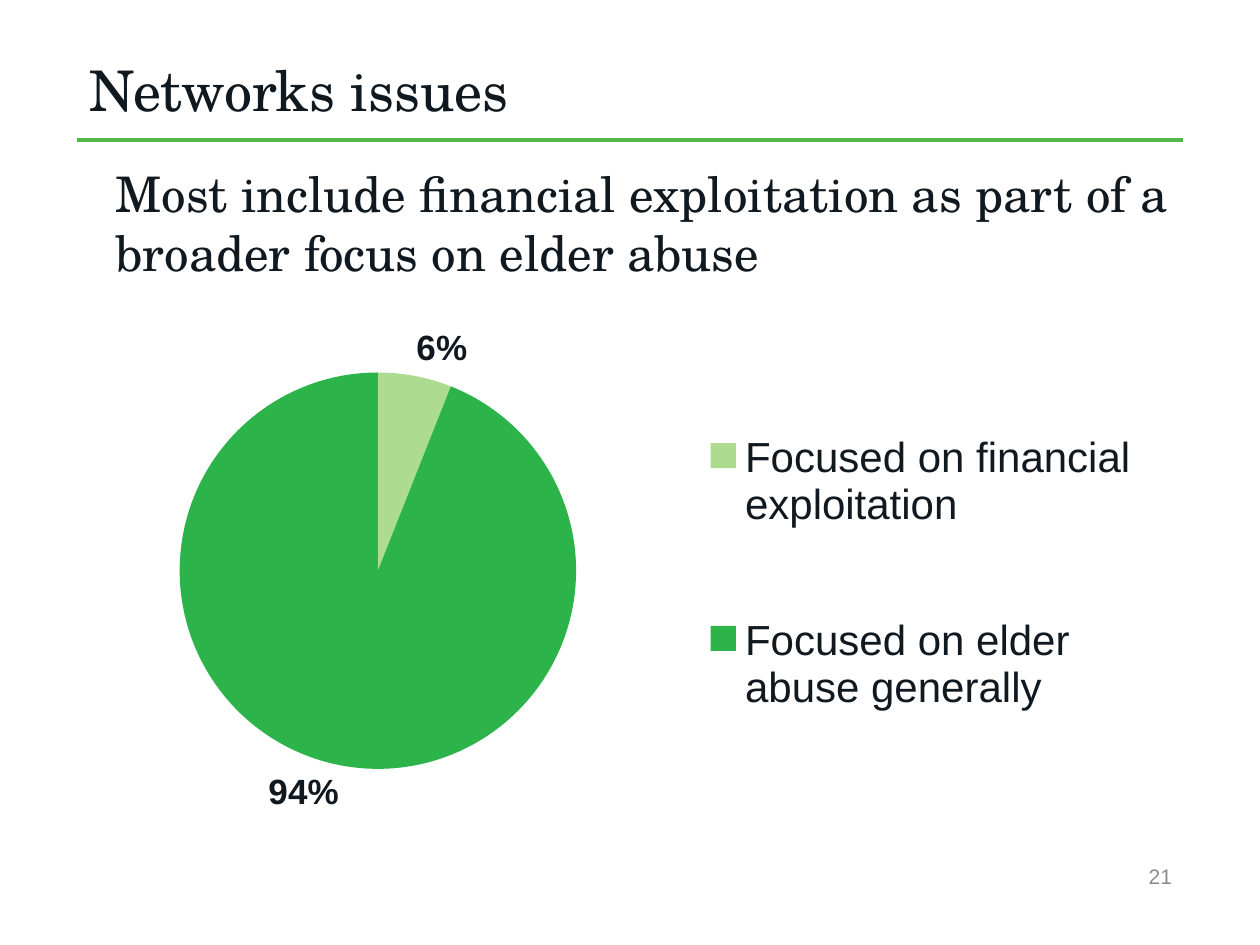
"""Build the slide on network issues with its pie chart."""
from lxml.etree import SubElement
from pptx import Presentation
from pptx.chart.data import CategoryChartData
from pptx.dml.color import RGBColor
from pptx.enum.chart import XL_CHART_TYPE, XL_LABEL_POSITION, XL_LEGEND_POSITION
from pptx.enum.shapes import MSO_CONNECTOR
from pptx.enum.text import MSO_ANCHOR, PP_ALIGN
from pptx.oxml.ns import qn
from pptx.util import Inches, Pt

INK = "101820"
SERIF = "TeX Gyre Schola"
SANS = "Arial"


def paint(item, code):
    item.rgb = RGBColor.from_string(code)


def style(font, size, name=SANS, color=INK, bold=False):
    font.size, font.name, font.bold = Pt(size), name, bold
    paint(font.color, color)


def write(frame, text, align=PP_ALIGN.LEFT, **look):
    para = frame.paragraphs[0]
    para.alignment = align
    run = para.add_run()
    run.text = text
    style(run.font, **look)


def place(node, index, inner=False, **frac):
    for old in node.findall(qn("c:layout")):
        node.remove(old)
    layout = SubElement(node, qn("c:layout"))
    node.insert(index, layout)
    manual = SubElement(layout, qn("c:manualLayout"))
    modes = {"layoutTarget": "inner"} if inner else {}
    modes.update(xMode="edge", yMode="edge")
    for key, value in {**modes, **frac}.items():
        SubElement(manual, qn("c:" + key)).set("val", str(value))


class Deck:
    def __init__(self):
        self.show = Presentation()
        self.show.slide_width, self.show.slide_height = Inches(10), Inches(7.5)
        self.slide = self.show.slides.add_slide(self.show.slide_layouts[6])

    def text(self, box, text, anchor=MSO_ANCHOR.MIDDLE, **look):
        frame = self.slide.shapes.add_textbox(*map(Inches, box)).text_frame
        frame.word_wrap = True
        frame.vertical_anchor = anchor
        write(frame, text, **look)

    def line(self, ends, color, width):
        line = self.slide.shapes.add_connector(
            MSO_CONNECTOR.STRAIGHT, *map(Inches, ends))
        paint(line.line.color, color)
        line.line.width = Pt(width)
        SubElement(line.element.spPr, qn("a:effectLst"))

    def pie(self, box, parts):
        data = CategoryChartData()
        data.categories = [name for name, value, color in parts]
        data.add_series("Series 1", [value for name, value, color in parts])
        chart = self.slide.shapes.add_chart(
            XL_CHART_TYPE.PIE, *map(Inches, box), data).chart
        style(chart.font, 10)
        chart.has_title = False
        chart.has_legend = True
        legend = chart.legend
        legend.position = XL_LEGEND_POSITION.RIGHT
        legend.include_in_layout = False
        style(legend.font, 24)
        plot = chart.plots[0]
        plot.vary_by_categories = True
        for index, (name, value, color) in enumerate(parts):
            fill = plot.series[0].points[index].format.fill
            fill.solid()
            paint(fill.fore_color, color)
        plot.has_data_labels = True
        labels = plot.data_labels
        labels.show_percentage, labels.show_value = True, False
        labels.number_format, labels.number_format_is_linked = "0%", False
        labels.position = XL_LABEL_POSITION.OUTSIDE_END
        style(labels.font, 20, bold=True)
        root = chart.element.find(qn("c:chart"))
        place(root.find(qn("c:plotArea")), 0, inner=True,
              x=0.11, y=0.12, w=0.36, h=0.76)
        place(root.find(qn("c:legend")), 1, x=0.57, y=0.07, w=0.42, h=0.87)


def main():
    deck = Deck()
    deck.line((0.61, 1.11, 9.39, 1.11), "50B748", 2)
    deck.text((0.61, 0.3, 8.79, 0.81), "Networks issues", size=32, name=SERIF)
    deck.text((6.23, 6.75, 3.17, 0.4), "21", align=PP_ALIGN.RIGHT,
              size=12, color="8C8C8D")
    deck.pie((0.45, 2.46, 8.79, 4.14), [
        ("Focused on financial exploitation", 6, "ADDC91"),
        ("Focused on elder abuse generally", 94, "2CB34A"),
    ])
    deck.text((0.82, 1.25, 8.57, 1.04),
              "Most include financial exploitation as part of a "
              "broader focus on elder abuse",
              anchor=MSO_ANCHOR.TOP, size=28, name=SERIF)
    deck.show.save("out.pptx")


if __name__ == "__main__":
    main()
